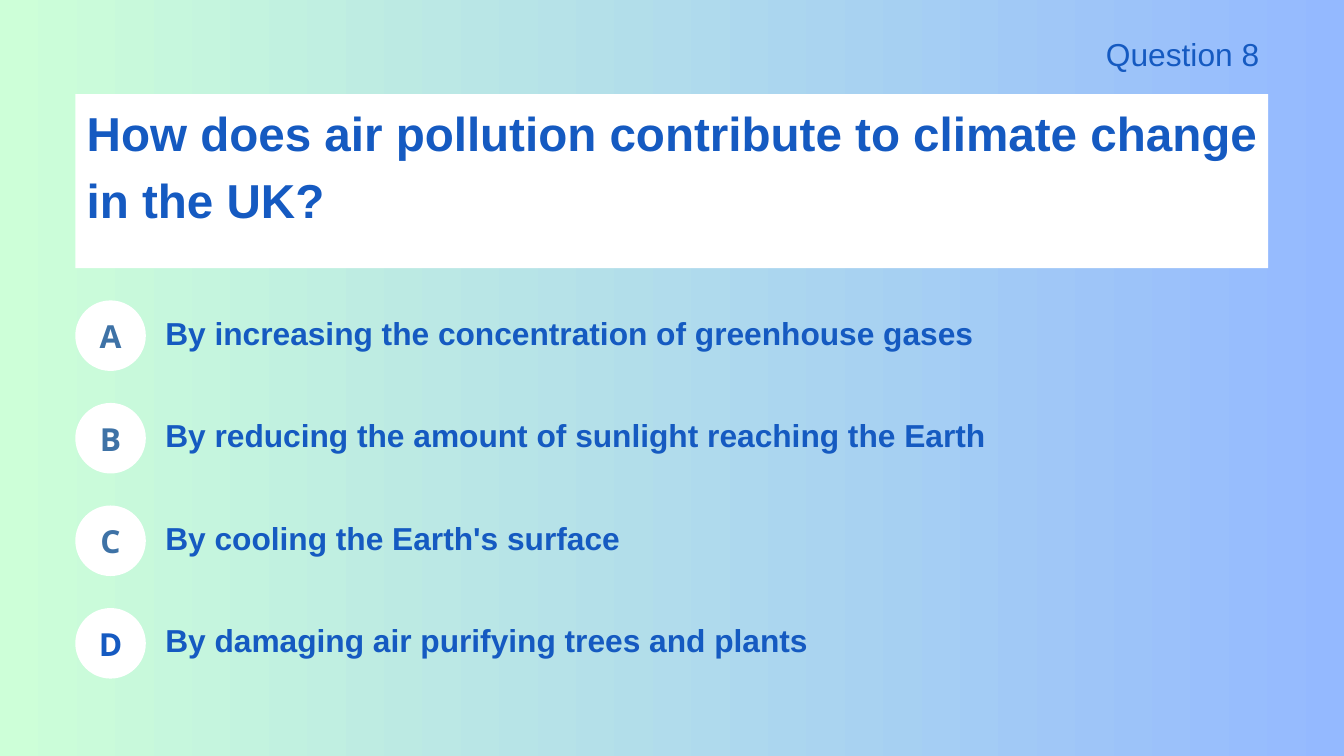
"""Build a quiz slide: a question on a panel and four lettered answers."""
from pptx import Presentation
from pptx.dml.color import RGBColor
from pptx.enum.shapes import MSO_SHAPE as Shape
from pptx.enum.text import MSO_ANCHOR as Anchor, MSO_AUTO_SIZE as Fit, PP_ALIGN as Align
from pptx.util import Inches, Pt

WHITE = RGBColor(0xFF, 0xFF, 0xFF)
BLUE = RGBColor(0x15, 0x5A, 0xC1)
STEEL = RGBColor(0x3E, 0x72, 0xA6)
MINT = RGBColor(0xCD, 0xFF, 0xD8)
SKY = RGBColor(0x94, 0xB9, 0xFF)

WIDE, HIGH = 20, 11.25
LEFT, SPAN = 1.12, 17.75
TOP, PITCH, DISC = 4.47, 1.526, 1.05
LEAD = 1.4

ANSWERS = [
    ("A", "By increasing the concentration of greenhouse gases", STEEL),
    ("B", "By reducing the amount of sunlight reaching the Earth", STEEL),
    ("C", "By cooling the Earth's surface", STEEL),
    ("D", "By damaging air purifying trees and plants", BLUE),
]


def write(shape, text, size=34, font="Arial", color=BLUE, bold=True,
          align=Align.LEFT, anchor=Anchor.TOP, inset=(0, 0, 0, 0)):
    """Put formatted text in a shape."""
    frame = shape.text_frame
    frame.word_wrap = True
    frame.auto_size = Fit.NONE
    frame.vertical_anchor = anchor
    (frame.margin_left, frame.margin_top,
     frame.margin_right, frame.margin_bottom) = map(Inches, inset)
    line = frame.paragraphs[0]
    line.alignment = align
    line.line_spacing = Pt(size * LEAD)
    run = line.add_run()
    run.text = text
    run.font.size = Pt(size)
    run.font.name = font
    run.font.bold = bold
    run.font.color.rgb = color


def add_box(slide, text, area, **style):
    """Add a text box over an area."""
    write(slide.shapes.add_textbox(*map(Inches, area)), text, **style)


def add_plate(slide, kind, area):
    """Add a plain white shape over an area."""
    plate = slide.shapes.add_shape(kind, *map(Inches, area))
    plate.shadow.inherit = False
    plate.fill.solid()
    plate.fill.fore_color.rgb = WHITE
    plate.line.fill.background()
    return plate


def add_title(slide, text):
    """Set the question on its white panel."""
    title = slide.shapes.title
    panel = add_plate(slide, Shape.RECTANGLE, (LEFT, 1.4, SPAN, 2.59))
    title.element.addprevious(panel.element)
    title.left, title.top, title.width, title.height = map(
        Inches, (1.29, 1.41, 17.59, 2.06))
    write(title, text, size=51)


def add_answer(slide, row, mark, text, color):
    """Add one lettered answer on its row."""
    top = TOP + row * PITCH
    disc = add_plate(slide, Shape.OVAL, (LEFT, top, DISC, DISC))
    write(disc, mark, font="Open Sans", color=color, align=Align.CENTER,
          anchor=Anchor.MIDDLE, inset=(0, 0, 0, 0.08))
    add_box(slide, text, (2.46, top + 0.1, 16.41, 0.71))


def paint(slide):
    """Fill the background with a left-to-right gradient."""
    fill = slide.background.fill
    fill.gradient()
    fill.gradient_angle = 0
    for stop, color in zip(fill.gradient_stops, (MINT, SKY)):
        stop.color.rgb = color


def main():
    """Build and save the slide."""
    deck = Presentation()
    deck.slide_width, deck.slide_height = Inches(WIDE), Inches(HIGH)
    slide = deck.slides.add_slide(deck.slide_layouts[5])
    paint(slide)
    add_title(slide, "How does air pollution contribute to climate change in the UK?")
    add_box(slide, "Question 8", (11.58, 0.43, 7.16, 0.71),
            bold=False, align=Align.RIGHT)
    for row, answer in enumerate(ANSWERS):
        add_answer(slide, row, *answer)
    deck.save("out.pptx")


if __name__ == "__main__":
    main()
